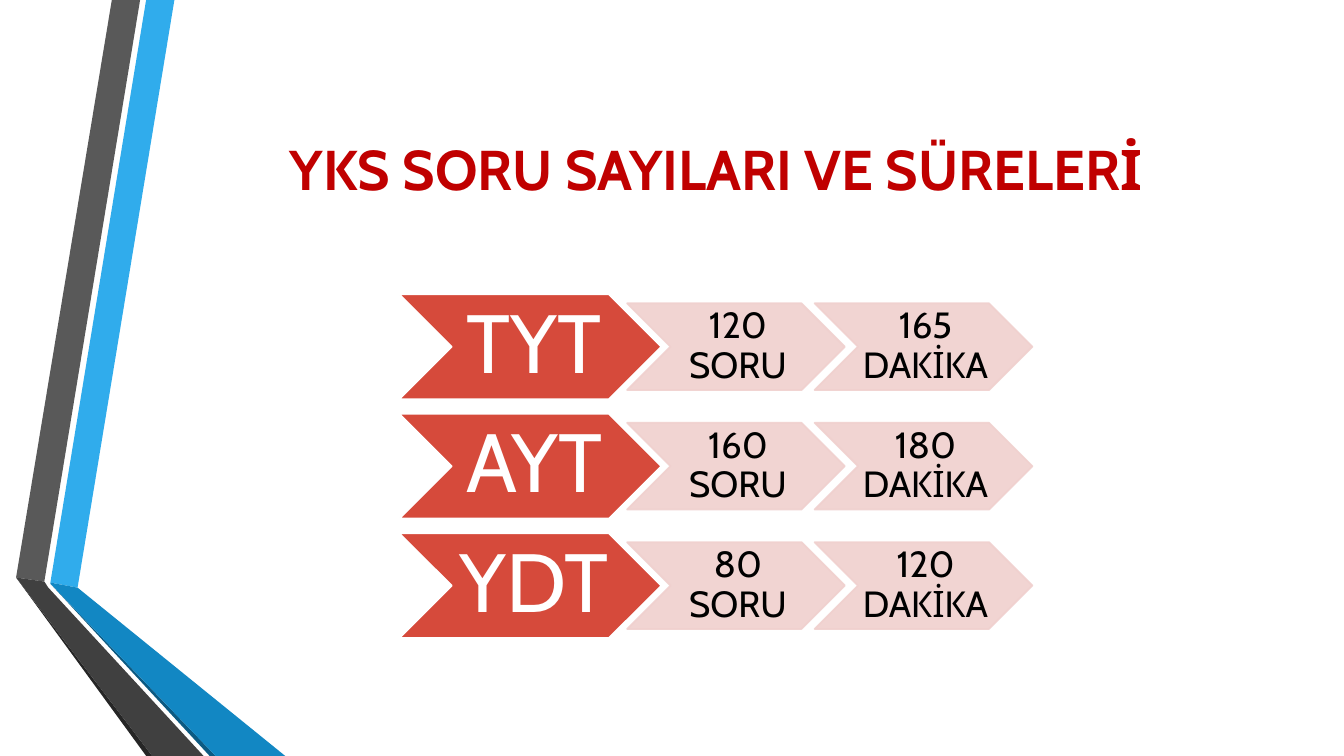
from lxml.etree import SubElement
from pptx import Presentation
from pptx.dml.color import RGBColor
from pptx.enum.shapes import MSO_SHAPE
from pptx.enum.text import MSO_ANCHOR, PP_ALIGN
from pptx.oxml.ns import qn
from pptx.util import Inches, Pt

FONT = "Cabin"
RIBBONS = [
    ("30ACEC", [(0.5, 5.78), (0.77, 5.83), (1.73, 0), (1.45, 0)]),
    ("595959", [(1.39, 0), (1.11, 0), (0.16, 5.73), (0.44, 5.77)]),
    ("262626", [(0.16, 5.73), (1.45, 7.5), (1.51, 7.5)]),
    ("0C5A82", [(0.5, 5.79), (2.08, 7.5), (2.14, 7.5)]),
    ("1287C3", [(0.5, 5.79), (2.14, 7.5), (2.83, 7.5), (0.77, 5.83), (0.5, 5.78)]),
    ("404040", [(2.02, 7.5), (0.48, 5.83), (0.44, 5.77), (0.16, 5.73), (1.51, 7.5)]),
]
EXAMS = [
    ("TYT", "120 SORU", "165 DAKİKA"),
    ("AYT", "160 SORU", "180 DAKİKA"),
    ("YDT", "80 SORU", "120 DAKİKA"),
]
FIRST_ROW_TOP, ROW_STEP = 2.92, 1.185
NAME_STYLE = {"size": (2.6, 1.04), "fill": "D64A3B", "line": "FFFFFF",
              "font_size": 59, "font_color": "FFFFFF", "inset": 0.08}
DETAIL_STYLE = {"size": (2.16, 0.86), "fill": "F0D0CE", "line": "F0D0CE",
                "font_size": 26, "font_color": "000000", "inset": 0.04,
                "opacity": 90}


def color(hex_value):
    return RGBColor.from_string(hex_value)


def set_fill(shape, hex_value):
    shape.shadow.inherit = False
    shape.fill.solid()
    shape.fill.fore_color.rgb = color(hex_value)


def set_opacity(shape, percent):
    """Apply one opacity to both the fill and the outline."""
    for paint in list(shape.element.spPr.iter(qn("a:srgbClr"))):
        SubElement(paint, qn("a:alpha"), val=str(percent * 1000))


def write_text(shape, text, size, hex_value, bold=False, inset=0.1):
    frame = shape.text_frame
    settings = {
        "word_wrap": True, "vertical_anchor": MSO_ANCHOR.MIDDLE,
        "margin_left": Inches(inset), "margin_right": Inches(0),
        "margin_top": Inches(inset / 2), "margin_bottom": Inches(inset / 2),
    }
    for name, value in settings.items():
        setattr(frame, name, value)
    para = frame.paragraphs[0]
    para.alignment = PP_ALIGN.CENTER
    para.line_spacing = 0.9
    span = para.add_run()
    span.text = text
    for name, value in {"name": FONT, "size": Pt(size), "bold": bold}.items():
        setattr(span.font, name, value)
    span.font.color.rgb = color(hex_value)


def add_ribbon(page, hex_value, points):
    corners = [(Inches(x), Inches(y)) for x, y in points]
    builder = page.shapes.build_freeform(*corners[0], scale=1.0)
    builder.add_line_segments(corners[1:], close=True)
    ribbon = builder.convert_to_shape()
    set_fill(ribbon, hex_value)
    ribbon.line.fill.background()


def add_title(page, text):
    box = page.shapes.add_textbox(Inches(1.62), Inches(0.75),
                                  Inches(10.96), Inches(1.92))
    write_text(box, text, 40, "C00000", bold=True, inset=0)


def add_chevron(page, left, middle, text, style):
    width, height = style["size"]
    chevron = page.shapes.add_shape(
        MSO_SHAPE.CHEVRON, Inches(left), Inches(middle - height / 2),
        Inches(width), Inches(height))
    set_fill(chevron, style["fill"])
    chevron.line.color.rgb = color(style["line"])
    chevron.line.width = Pt(1.25)
    if "opacity" in style:
        set_opacity(chevron, style["opacity"])
    write_text(chevron, text, style["font_size"], style["font_color"],
               inset=style["inset"])


def main():
    deck = Presentation()
    deck.slide_width, deck.slide_height = Inches(13.33), Inches(7.5)
    page = deck.slides.add_slide(deck.slide_layouts[6])
    for hex_value, points in RIBBONS:
        add_ribbon(page, hex_value, points)
    add_title(page, "YKS SORU SAYILARI VE SÜRELERİ")
    for row, (exam, questions, duration) in enumerate(EXAMS):
        middle = FIRST_ROW_TOP + NAME_STYLE["size"][1] / 2 + row * ROW_STEP
        add_chevron(page, 3.96, middle, exam, NAME_STYLE)
        add_chevron(page, 6.22, middle, questions, DETAIL_STYLE)
        add_chevron(page, 8.08, middle, duration, DETAIL_STYLE)
    deck.save("out.pptx")


if __name__ == "__main__":
    main()
